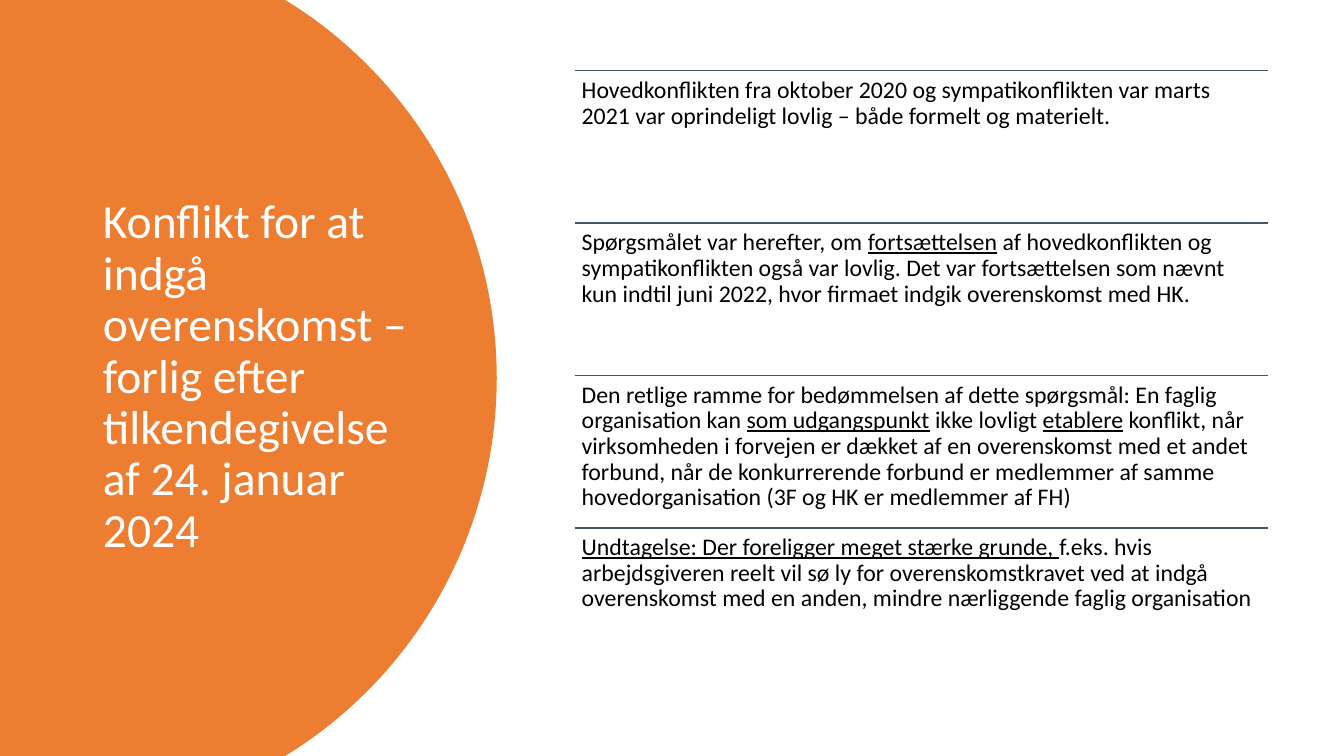
import math

from lxml import etree
from pptx import Presentation
from pptx import util as u
from pptx.dml.color import RGBColor
from pptx.enum import shapes, text
from pptx.oxml.ns import qn

SLIDE_WIDTH, SLIDE_HEIGHT = 33.87, 19.05
POINTS_LEFT, POINTS_TOP, POINTS_WIDTH, POINT_PITCH = 14.48, 1.78, 17.48, 3.84
ARC_DEPTH, ARC_RIGHT, ARC_STEPS = 5.33, 12.52, 80

HEADING = ("Konflikt for at indgå overenskomst – forlig efter "
           "tilkendegivelse af 24. januar 2024")

POINTS = [
    [("Hovedkonflikten fra oktober 2020 og sympatikonflikten var marts 2021 "
      "var oprindeligt lovlig – både formelt og materielt.", False)],
    [("Spørgsmålet var herefter, om ", False),
     ("fortsættelsen", True),
     (" af hovedkonflikten og sympatikonflikten også var lovlig. Det var "
      "fortsættelsen som nævnt kun indtil juni 2022, hvor firmaet indgik "
      "overenskomst med HK.", False)],
    [("Den retlige ramme for bedømmelsen af dette spørgsmål: En faglig "
      "organisation kan ", False),
     ("som udgangspunkt", True),
     (" ikke lovligt ", False),
     ("etablere", True),
     (" konflikt, når virksomheden i forvejen er dækket af en overenskomst "
      "med et andet forbund, når de konkurrerende forbund er medlemmer af "
      "samme hovedorganisation (3F og HK er medlemmer af FH)", False)],
    [("Undtagelse: Der foreligger meget stærke grunde, ", True),
     ("f.eks. hvis arbejdsgiveren reelt vil sø ly for overenskomstkravet ved "
      "at indgå overenskomst med en anden, mindre nærliggende faglig "
      "organisation", False)],
]

HEADING_FRAME = {
    "word_wrap": True,
    "auto_size": text.MSO_AUTO_SIZE.NONE,
    "vertical_anchor": text.MSO_ANCHOR.MIDDLE,
}
POINT_FRAME = {
    "word_wrap": True,
    "vertical_anchor": text.MSO_ANCHOR.TOP,
    **{f"margin_{side}": u.Cm(0.18) for side in ("left", "top", "right", "bottom")},
}
PARAGRAPH = {"line_spacing": 0.9, "alignment": text.PP_ALIGN.LEFT}


def set_values(target, values):
    for name, value in values.items():
        setattr(target, name, value)


def color(hex_value):
    return RGBColor.from_string(hex_value)


def write(frame, frame_format, parts, size, hex_value):
    set_values(frame, frame_format)
    paragraph = frame.paragraphs[0]
    set_values(paragraph, PARAGRAPH)
    for words, underlined in parts:
        run = paragraph.add_run()
        run.text = words
        set_values(run.font, {"name": "Calibri", "size": u.Pt(size),
                              "underline": underlined})
        run.font.color.rgb = color(hex_value)


def add_round_panel(slide, hex_value):
    half = SLIDE_HEIGHT / 2
    radius = (half ** 2 + ARC_DEPTH ** 2) / (2 * ARC_DEPTH)
    reach = math.asin(half / radius)
    angles = [reach * (2 * step / ARC_STEPS - 1) for step in range(ARC_STEPS + 1)]
    arc = [(u.Cm(ARC_RIGHT - radius + radius * math.cos(angle)),
            u.Cm(half + radius * math.sin(angle))) for angle in angles]
    outline = slide.shapes.build_freeform(0, 0)
    outline.add_line_segments(arc + [(0, u.Cm(SLIDE_HEIGHT))], close=True)
    panel = outline.convert_to_shape()
    panel.shadow.inherit = False
    panel.fill.solid()
    panel.fill.fore_color.rgb = color(hex_value)
    panel.line.fill.background()
    return panel


def add_heading(slide, panel):
    heading = slide.shapes.title
    set_values(heading, {"left": u.Cm(2.34), "top": u.Cm(1.78),
                         "width": u.Cm(8.2), "height": u.Cm(15.47)})
    write(heading.text_frame, HEADING_FRAME, [(HEADING, False)], 34, "FFFFFF")
    panel.element.addnext(heading.element)


def add_rule(slide, top):
    rule = slide.shapes.add_connector(
        shapes.MSO_CONNECTOR.STRAIGHT, u.Cm(POINTS_LEFT), u.Cm(top),
        u.Cm(POINTS_LEFT + POINTS_WIDTH), u.Cm(top))
    rule.line.color.rgb = color("44546A")
    rule.line.width = u.Pt(1)
    etree.SubElement(rule.element.spPr, qn("a:effectLst"))


def add_point(slide, top, parts):
    add_rule(slide, top)
    point = slide.shapes.add_textbox(u.Cm(POINTS_LEFT), u.Cm(top),
                                     u.Cm(POINTS_WIDTH), u.Cm(POINT_PITCH))
    write(point.text_frame, POINT_FRAME, parts, 17, "000000")


def main():
    deck = Presentation()
    set_values(deck, {"slide_width": u.Cm(SLIDE_WIDTH),
                      "slide_height": u.Cm(SLIDE_HEIGHT)})
    slide = deck.slides.add_slide(deck.slide_layouts[5])
    add_heading(slide, add_round_panel(slide, "ED7D31"))
    for index, parts in enumerate(POINTS):
        add_point(slide, POINTS_TOP + index * POINT_PITCH, parts)
    deck.save("out.pptx")


if __name__ == "__main__":
    main()
